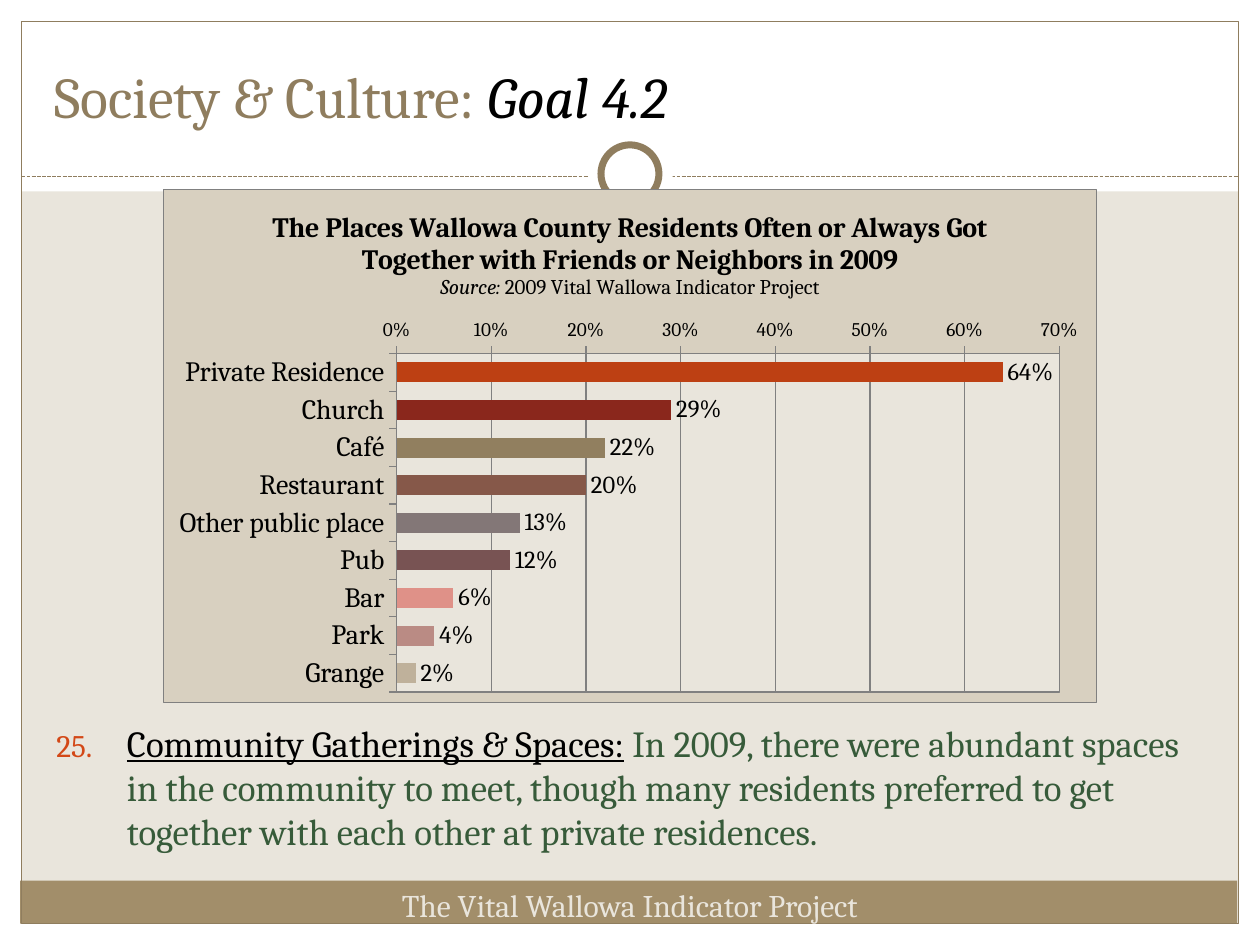
from lxml.etree import SubElement
from pptx import Presentation
from pptx.chart.data import CategoryChartData
from pptx.dml.color import RGBColor
from pptx.enum.chart import XL_CHART_TYPE as ChartType, XL_LABEL_POSITION as LabelPos, XL_TICK_MARK as Tick
from pptx.enum.dml import MSO_LINE as Dash
from pptx.enum.shapes import MSO_CONNECTOR as Connector, MSO_SHAPE as Preset
from pptx.enum.text import MSO_ANCHOR as Anchor, PP_ALIGN as Align
from pptx.oxml import parse_xml
from pptx.oxml.ns import nsdecls, qn
from pptx.util import Inches, Pt

COLORS = {
    "paper": "E9E5DC", "white": "FFFFFF", "band": "A28E6A", "trim": "8F7D5E",
    "panel": "D8D0C0", "grid": "808080", "text": "000000", "finding": "375B3A",
    "number": "D34817",
}
PLACES = [
    ("Private Residence", 0.64, "BD4013"), ("Church", 0.29, "8A271C"),
    ("Café", 0.22, "917F5F"), ("Restaurant", 0.20, "865849"),
    ("Other public place", 0.13, "837777"), ("Pub", 0.12, "785353"),
    ("Bar", 0.06, "DF9188"), ("Park", 0.04, "BA8B84"), ("Grange", 0.02, "BFB19B"),
]


def rgb(color):
    return RGBColor.from_string(COLORS.get(color, color))


def apply(target, formats):
    for name, value in formats.items():
        setattr(target, name, value)


class SlideBuilder:
    font = "Cambria"

    def __init__(self, slide):
        self.slide = slide
        self.shapes = slide.shapes
        background = slide.background.fill
        background.solid()
        background.fore_color.rgb = rgb("paper")

    def paint(self, fill, color):
        fill.solid()
        fill.fore_color.rgb = rgb(color)

    def stroke(self, line, color, width=0.75):
        line.color.rgb = rgb(color)
        line.width = Pt(width)

    def style(self, font, size, color="text", **formats):
        apply(font, {"name": self.font, "size": Pt(size), **formats})
        font.color.rgb = rgb(color)

    def add_runs(self, paragraph, runs):
        for text, size, color, formats in runs:
            run = paragraph.add_run()
            run.text = text
            self.style(run.font, size, color, **formats)

    def shape(self, preset, box, fill=None, line=None, width=0.75):
        shape = self.shapes.add_shape(preset, *map(Inches, box))
        shape.shadow.inherit = False
        if fill:
            self.paint(shape.fill, fill)
        else:
            shape.fill.background()
        if line:
            self.stroke(shape.line, line, width)
        else:
            shape.line.fill.background()

    def divider(self, y, left, right):
        rule = self.shapes.add_connector(Connector.STRAIGHT, *map(Inches, (left, y, right, y)))
        self.stroke(rule.line, "trim")
        rule.line.dash_style = Dash.SQUARE_DOT
        SubElement(rule.element.spPr, qn("a:effectLst"))

    def title(self, box, runs):
        title = self.shapes.title
        self.shapes.element.append(title.element)
        apply(title, dict(zip(("left", "top", "width", "height"), map(Inches, box))))
        apply(title.text_frame, {"vertical_anchor": Anchor.BOTTOM, "word_wrap": True})
        paragraph = title.text_frame.paragraphs[0]
        paragraph.alignment = Align.LEFT
        self.add_runs(paragraph, runs)

    def text(self, box, runs, align=Align.LEFT, fill=None):
        label = self.shapes.add_textbox(*map(Inches, box))
        if fill:
            self.paint(label.fill, fill)
        label.text_frame.word_wrap = True
        paragraph = label.text_frame.paragraphs[0]
        paragraph.alignment = align
        self.add_runs(paragraph, runs)
        return paragraph

    def numbered(self, box, start, runs, fill):
        paragraph = self.text(box, runs, fill=fill)
        paragraph.space_before = Pt(4.2)
        props = paragraph._p.get_or_add_pPr()
        props.set("marL", str(Inches(0.56)))
        props.set("indent", str(Inches(-0.56)))
        color = SubElement(props, qn("a:buClr"))
        SubElement(color, qn("a:srgbClr"), val=COLORS["number"])
        SubElement(props, qn("a:buSzPct"), val="85000")
        SubElement(props, qn("a:buAutoNum"), type="arabicPeriod", startAt=str(start))

    def bar_chart(self, box, places, heading, source, plot):
        data = CategoryChartData(number_format="0%")
        data.categories = [name for name, _, _ in places]
        data.add_series("Series 1", [share for _, share, _ in places])
        chart = self.shapes.add_chart(ChartType.BAR_CLUSTERED, *map(Inches, box), data).chart
        chart.has_legend = False
        self.style(chart.font, 10)

        title = chart.chart_title.text_frame
        self.add_runs(title.paragraphs[0], heading)
        self.add_runs(title.add_paragraph(), source)

        category, value = chart.category_axis, chart.value_axis
        apply(category, {"reverse_order": True, "major_tick_mark": Tick.OUTSIDE})
        apply(value, {"minimum_scale": 0, "maximum_scale": 0.7, "major_unit": 0.1,
                      "has_major_gridlines": True, "major_tick_mark": Tick.OUTSIDE})
        apply(value.tick_labels, {"number_format": "0%", "number_format_is_linked": False})
        self.stroke(value.major_gridlines.format.line, "grid")
        for axis, size in ((category, 16), (value, 11)):
            self.style(axis.tick_labels.font, size)
            self.stroke(axis.format.line, "grid")

        bars = chart.plots[0]
        apply(bars, {"gap_width": 88, "vary_by_categories": False, "has_data_labels": True})
        apply(bars.data_labels, {"show_value": True, "position": LabelPos.OUTSIDE_END,
                                 "number_format": "0%", "number_format_is_linked": False})
        self.style(bars.data_labels.font, 14)
        for index, (_, _, color) in enumerate(places):
            self.paint(bars.series[0].points[index].format.fill, color)
        self.chart_areas(chart, plot)

    def chart_areas(self, chart, plot):
        def area(color):
            return parse_xml(
                f'<c:spPr {nsdecls("c", "a")}><a:solidFill><a:srgbClr val="{COLORS[color]}"/></a:solidFill>'
                f'<a:ln w="9525"><a:solidFill><a:srgbClr val="{COLORS["grid"]}"/></a:solidFill></a:ln></c:spPr>')

        plot_area = chart._chartSpace.chart.plotArea
        for old in plot_area.findall(qn("c:layout")):
            plot_area.remove(old)
        position = "".join(f'<c:{key} val="{size}"/>' for key, size in zip("xywh", plot))
        plot_area.insert(0, parse_xml(
            f'<c:layout {nsdecls("c")}><c:manualLayout><c:layoutTarget val="inner"/>'
            f'<c:xMode val="edge"/><c:yMode val="edge"/>{position}</c:manualLayout></c:layout>'))
        plot_area.append(area("paper"))
        chart._chartSpace.chart.addnext(area("panel"))


def main():
    prs = Presentation()
    apply(prs, {"slide_width": Inches(10), "slide_height": Inches(7.5)})
    page = SlideBuilder(prs.slides.add_slide(prs.slide_layouts[5]))

    edges = [(0, 7.33, 10, 0.17), (0, 0, 10, 1.52), (0, 0, 0.17, 7.5), (9.83, 0, 0.17, 7.5)]
    for edge in edges:
        page.shape(Preset.RECTANGLE, edge, "white")
    page.shape(Preset.RECTANGLE, (0.16, 6.99, 9.66, 0.34), "band")
    page.shape(Preset.RECTANGLE, (0.17, 0.17, 9.66, 7.16), line="trim")
    page.divider(1.4, 0.17, 9.83)
    page.shape(Preset.OVAL, (4.67, 1.05, 0.67, 0.67), "white")
    page.shape(Preset.OVAL, (4.77, 1.15, 0.46, 0.46), "white", "trim", 4)

    page.title((0.33, 0.25, 9.33, 0.83), [
        ("Society & Culture: ", 33, "trim", {}),
        ("Goal 4.2", 33, "text", {"italic": True}),
    ])
    page.numbered((0.35, 5.67, 9.3, 1.25), 25, [
        ("Community Gatherings & Spaces:", 21, "text", {"underline": True}),
        (" ", 21, "text", {}),
        ("In 2009, there were abundant spaces in the community to meet, though many "
         "residents preferred to get together with each other at private residences.",
         21, "finding", {}),
    ], "paper")
    page.text((2.75, 6.98, 4.5, 0.4),
              [("The Vital Wallowa Indicator Project", 18, "paper", {})], Align.CENTER)
    page.bar_chart(
        (1.29, 1.5, 7.42, 4.08), PLACES,
        [("The Places Wallowa County Residents Often or Always Got Together with "
          "Friends or Neighbors in 2009", 16, "text", {"bold": True})],
        [("Source:", 12, "text", {"bold": False, "italic": True}),
         (" 2009 Vital Wallowa Indicator Project", 12, "text", {"bold": False, "italic": False})],
        (0.25, 0.32, 0.71, 0.66))
    prs.save("out.pptx")


if __name__ == "__main__":
    main()
